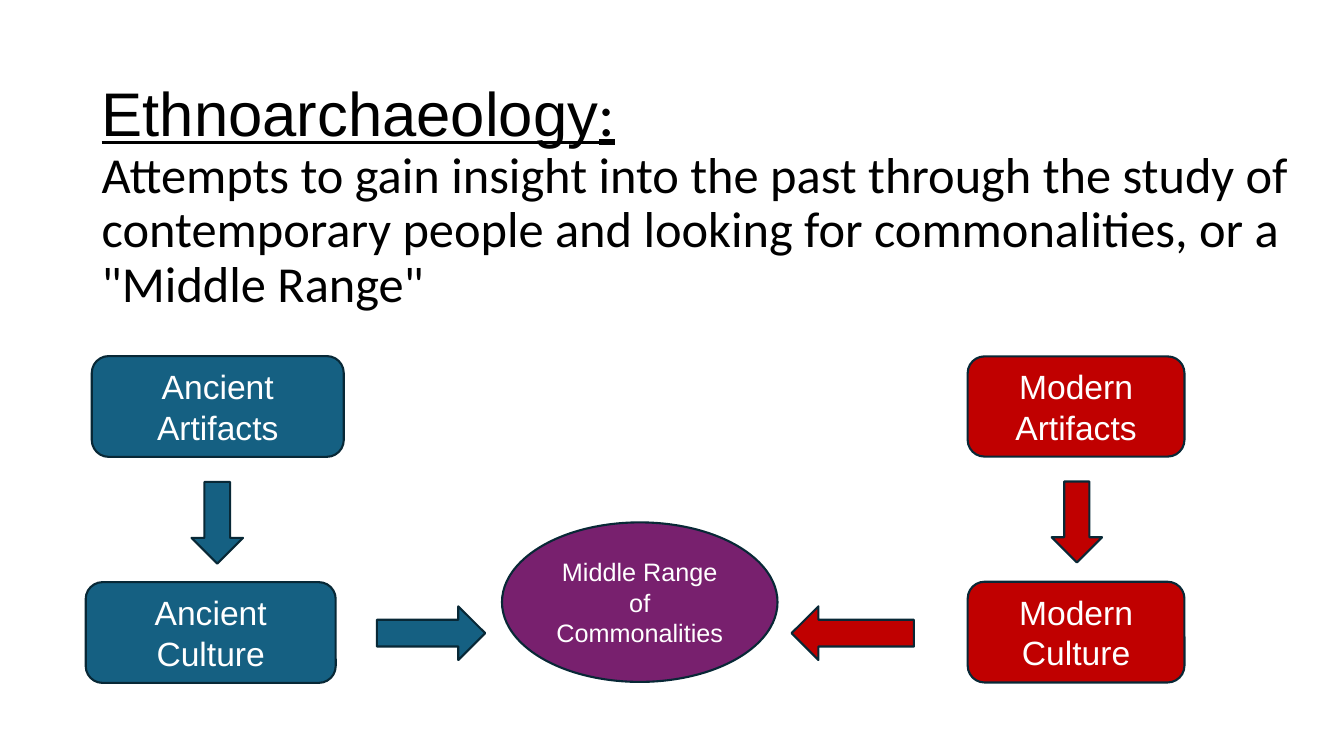
from dataclasses import dataclass

import pptx
import pptx.dml.color
import pptx.enum.shapes
import pptx.enum.text
import pptx.util

SHAPE = pptx.enum.shapes.MSO_SHAPE
ANCHOR = pptx.enum.text.MSO_ANCHOR
ALIGN = pptx.enum.text.PP_ALIGN

SLIDE_WIDTH = pptx.util.Inches(13.33)
SLIDE_HEIGHT = pptx.util.Inches(7.5)
BLUE, RED, PURPLE = "156082", "C00000", "78206E"
OUTLINE, WHITE, BLACK = "082836", "FFFFFF", "000000"


@dataclass(frozen=True)
class Area:
    """Percentages of the slide's width and height."""
    left: float
    top: float
    width: float
    height: float

    def lengths(self) -> tuple[int, int, int, int]:
        return (
            int(SLIDE_WIDTH * self.left / 100),
            int(SLIDE_HEIGHT * self.top / 100),
            int(SLIDE_WIDTH * self.width / 100),
            int(SLIDE_HEIGHT * self.height / 100),
        )


@dataclass(frozen=True)
class Node:
    kind: SHAPE
    area: Area
    fill: str
    label: str = ""
    size: int = 24


@dataclass(frozen=True)
class Span:
    text: str
    font: str
    size: int
    underline: bool = False


TITLE_AREA = Area(6.83, 5.33, 90.55, 41.73)
HEADING = [Span("Ethnoarchaeology", "Arial", 44, True), Span(":", "Calibri", 44, True)]
DEFINITION = Span(
    "Attempts to gain insight into the past through the study of contemporary "
    'people and looking for commonalities, or a "Middle Range"',
    "Calibri",
    36,
)

NODES = [
    Node(SHAPE.ROUNDED_RECTANGLE, Area(6.83, 47.1, 18.75, 13.33), BLUE, "Ancient Artifacts"),
    Node(SHAPE.ROUNDED_RECTANGLE, Area(6.38, 77, 18.6, 13.33), BLUE, "Ancient Culture"),
    Node(SHAPE.ROUNDED_RECTANGLE, Area(72, 47.15, 16.13, 13.25), RED, "Modern Artifacts"),
    Node(SHAPE.ROUNDED_RECTANGLE, Area(72, 76.95, 16.13, 13.33), RED, "Modern Culture"),
    Node(SHAPE.OVAL, Area(37.35, 69.1, 20.5, 21.1), PURPLE, "Middle Range of Commonalities", 18),
    Node(SHAPE.DOWN_ARROW, Area(14.25, 63.75, 3.83, 10.8), BLUE),
    Node(SHAPE.DOWN_ARROW, Area(78.25, 63.7, 3.75, 10.7), RED),
    Node(SHAPE.RIGHT_ARROW, Area(28.05, 80.2, 8.05, 7.1), BLUE),
    Node(SHAPE.LEFT_ARROW, Area(58.9, 80.2, 9.1, 7.1), RED),
]


def color(value: str) -> pptx.dml.color.RGBColor:
    return pptx.dml.color.RGBColor.from_string(value)


def add_span(para, span: Span) -> None:
    run = para.add_run()
    run.text = span.text
    run.font.name = span.font
    run.font.size = pptx.util.Pt(span.size)
    run.font.underline = span.underline
    run.font.color.rgb = color(BLACK)


def add_title(page) -> None:
    box = page.shapes.add_textbox(*TITLE_AREA.lengths())
    frame = box.text_frame
    frame.word_wrap = True
    frame.vertical_anchor = ANCHOR.MIDDLE
    para = frame.paragraphs[0]
    para.line_spacing = 0.9
    for span in HEADING:
        add_span(para, span)
    para.add_line_break()
    add_span(para, DEFINITION)


def add_node(page, node: Node) -> None:
    shape = page.shapes.add_shape(node.kind, *node.area.lengths())
    shape.shadow.inherit = False
    shape.fill.solid()
    shape.fill.fore_color.rgb = color(node.fill)
    shape.line.color.rgb = color(OUTLINE)
    shape.line.width = pptx.util.Pt(1.5)
    if not node.label:
        return
    frame = shape.text_frame
    frame.word_wrap = True
    frame.vertical_anchor = ANCHOR.MIDDLE
    para = frame.paragraphs[0]
    para.text = node.label
    para.alignment = ALIGN.CENTER
    para.font.name = "Arial"
    para.font.size = pptx.util.Pt(node.size)
    para.font.color.rgb = color(WHITE)


def main() -> None:
    deck = pptx.Presentation()
    deck.slide_width = SLIDE_WIDTH
    deck.slide_height = SLIDE_HEIGHT
    page = deck.slides.add_slide(deck.slide_layouts[6])
    add_title(page)
    for node in NODES:
        add_node(page, node)
    deck.save("out.pptx")


if __name__ == "__main__":
    main()
